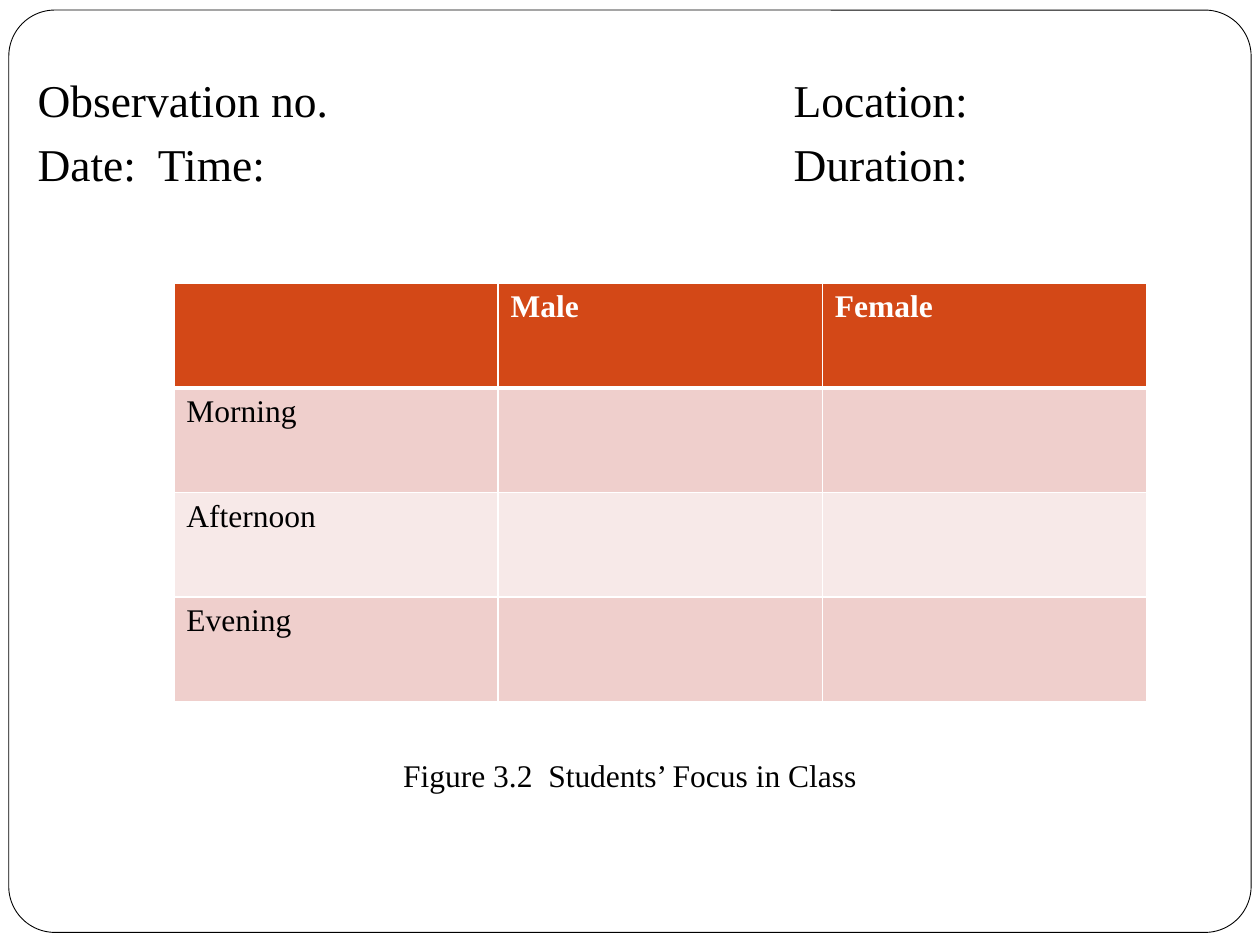
from dataclasses import dataclass

from lxml import etree
from pptx import Presentation
from pptx import util as u
from pptx.dml.color import RGBColor
from pptx.enum import shapes, text
from pptx.oxml.ns import qn


@dataclass(frozen=True)
class Theme:
    font: str = "Times New Roman"
    ink: str = "000000"
    paper: str = "FFFFFF"
    header: str = "D34817"
    bands: tuple = ("EFCFCC", "F7E9E8")
    heading_size: float = 26
    body_size: float = 18


THEME = Theme()
OBSERVATION_FIELDS = [("Observation no.", "Location:"), ("Date:  Time:", "Duration:")]
FOCUS_ROWS = [
    ("", "Male", "Female"),
    ("Morning", "", ""),
    ("Afternoon", "", ""),
    ("Evening", "", ""),
]


def color(value):
    return RGBColor.from_string(value)


def box(left, top, width, height):
    return [u.Inches(length) for length in (left, top, width, height)]


def style(paragraph, size, ink=THEME.ink, bold=False):
    for run in paragraph.runs:
        run.font.name = THEME.font
        run.font.size = u.Pt(size)
        run.font.bold = bold
        run.font.color.rgb = color(ink)


def add_frame(slide):
    frame = slide.shapes.add_shape(
        shapes.MSO_SHAPE.ROUNDED_RECTANGLE, *box(0.07, 0.08, 9.86, 7.32))
    frame.adjustments[0] = 0.05
    frame.shadow.inherit = False
    frame.fill.solid()
    frame.fill.fore_color.rgb = color(THEME.paper)
    frame.line.color.rgb = color(THEME.ink)
    frame.line.width = u.Pt(0.5)


def add_text(slide, place, words, size):
    frame = slide.shapes.add_textbox(*place).text_frame
    frame.word_wrap = True
    frame.text = words
    for paragraph in frame.paragraphs:
        style(paragraph, size)
    return frame.paragraphs


def add_tab_stop(paragraph, position):
    properties = paragraph._p.get_or_add_pPr()
    stops = etree.SubElement(properties, qn("a:tabLst"))
    etree.SubElement(stops, qn("a:tab"), pos=str(position), algn="l")


def add_observation_fields(slide):
    words = "\n".join("\t".join(pair) for pair in OBSERVATION_FIELDS)
    lines = add_text(slide, box(0.2, 0.52, 9.3, 1.2), words, THEME.heading_size)
    for line in lines:
        line.space_before = u.Pt(5.8)
        add_tab_stop(line, u.Inches(6))


def set_borders(cell, widths):
    """Draw white borders; they must precede the fill in the cell properties."""
    properties = cell._tc.get_or_add_tcPr()
    for side, points in widths.items():
        line = etree.SubElement(properties, qn(f"a:ln{side}"), w=str(u.Pt(points)))
        fill = etree.SubElement(line, qn("a:solidFill"))
        etree.SubElement(fill, qn("a:srgbClr"), val=THEME.paper)


def add_focus_table(slide):
    row_count, column_count = len(FOCUS_ROWS), len(FOCUS_ROWS[0])
    table = slide.shapes.add_table(
        row_count, column_count, *box(1.38, 2.25, 7.72, 3.32)).table
    for r, labels in enumerate(FOCUS_ROWS):
        is_header = r == 0
        background = THEME.header if is_header else THEME.bands[(r - 1) % 2]
        widths = {"L": 1, "R": 1, "T": 3 if r == 1 else 1, "B": 3 if is_header else 1}
        for c, label in enumerate(labels):
            cell = table.cell(r, c)
            set_borders(cell, widths)
            cell.fill.solid()
            cell.fill.fore_color.rgb = color(background)
            cell.text_frame.text = label
            style(cell.text_frame.paragraphs[0], THEME.body_size,
                  THEME.paper if is_header else THEME.ink, is_header)


def add_caption(slide):
    caption, = add_text(slide, box(1.3, 5.95, 7.4, 0.4),
                        "Figure 3.2  Students’ Focus in Class", THEME.body_size)
    caption.alignment = text.PP_ALIGN.CENTER


def main():
    deck = Presentation()
    deck.slide_width, deck.slide_height = u.Inches(10), u.Inches(7.5)
    slide = deck.slides.add_slide(deck.slide_layouts[6])

    # Rounded page border
    add_frame(slide)
    # Observation details
    add_observation_fields(slide)
    # Focus grid and its caption
    add_focus_table(slide)
    add_caption(slide)

    deck.save("out.pptx")


if __name__ == "__main__":
    main()
